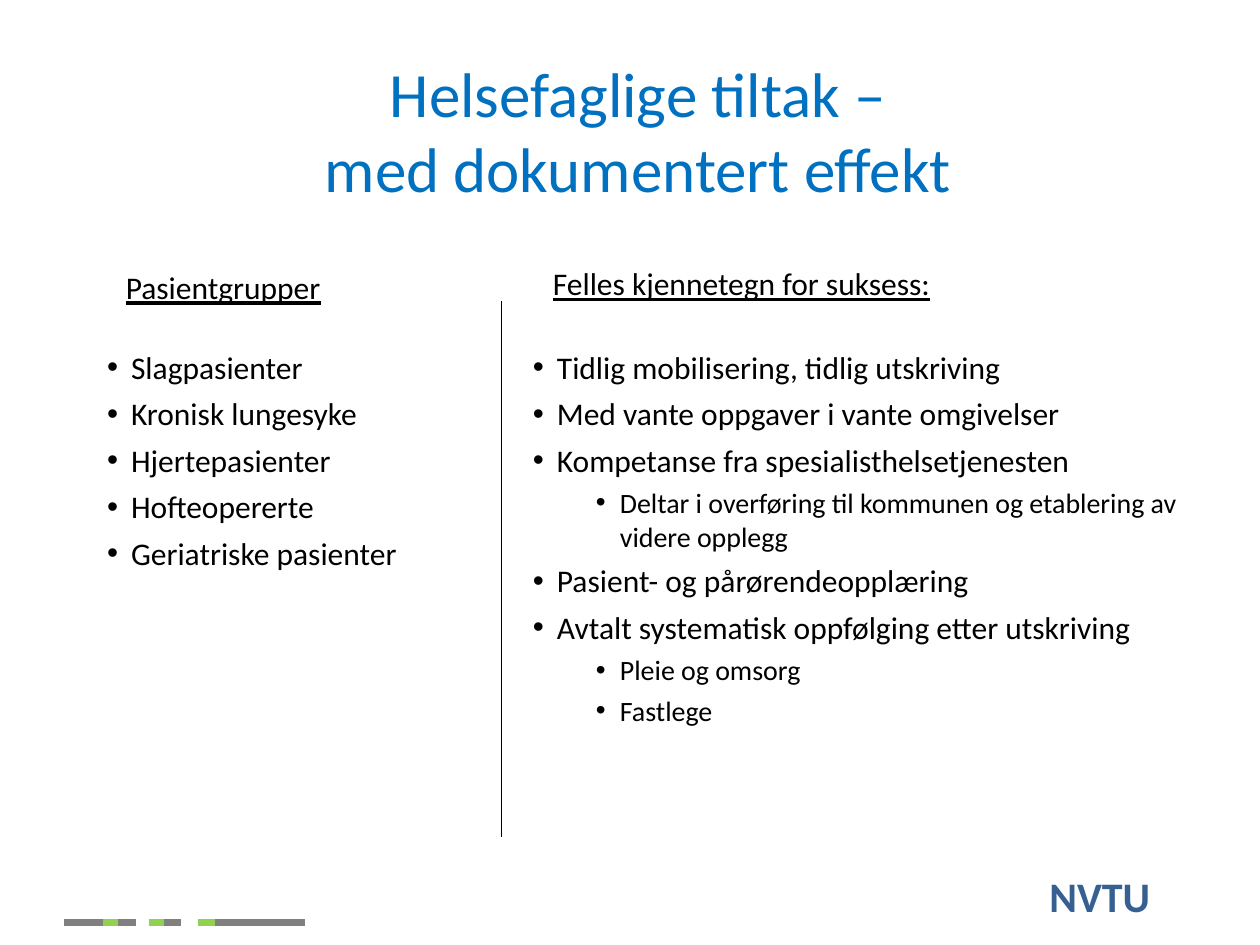
from lxml import etree
from pptx import Presentation
from pptx.dml.color import RGBColor
from pptx.enum.shapes import MSO_CONNECTOR
from pptx.enum.text import MSO_ANCHOR, MSO_AUTO_SIZE, PP_ALIGN
from pptx.oxml.ns import qn
from pptx.util import Inches, Pt

LINE = MSO_CONNECTOR.STRAIGHT
MIDDLE, TOP = MSO_ANCHOR.MIDDLE, MSO_ANCHOR.TOP
LEFT, CENTER = PP_ALIGN.LEFT, PP_ALIGN.CENTER
NONE = MSO_AUTO_SIZE.NONE


def write(shape, box, rows, size=18, color="000000", align=LEFT, anchor=TOP,
          bold=False, under=False, bullet=False, wrap=True):
    shape.left, shape.top, shape.width, shape.height = map(Inches, box)
    frame = shape.text_frame
    frame.word_wrap, frame.auto_size = wrap, NONE
    frame.vertical_anchor = anchor
    for i, (level, text) in enumerate(rows):
        para = frame.add_paragraph() if i else frame.paragraphs[0]
        para.text, para.level, para.alignment = text, level, align
        font = para.font
        font.name, font.size = "Calibri", Pt(size - 2 * level)
        font.bold, font.underline = bold, under
        font.color.rgb = RGBColor.from_string(color)
        for run in para.runs:
            run.font.name, run.font.size = "Calibri", font.size
            run.font.bold, run.font.underline = bold, under
            run.font.color.rgb = RGBColor.from_string(color)
        if bullet:
            para.space_before = Pt(5 - level)
            props = para._p.get_or_add_pPr()
            props.set("marL", str(Inches(0.19 + 0.5 * level)))
            props.set("indent", str(Inches(-0.19)))
            mark = etree.Element(qn("a:buChar"), char="•")
            props.find(qn("a:spcBef")).addnext(mark)


def rule(x1, y1, x2, y2, color, width):
    line = slide.shapes.add_connector(LINE, *map(Inches, (x1, y1, x2, y2)))
    line.line.color.rgb = RGBColor.from_string(color)
    line.line.width = Pt(width)
    etree.SubElement(line._element.spPr, qn("a:effectLst"))


deck = Presentation()
deck.slide_width, deck.slide_height = Inches(10), Inches(7.5)
slide = deck.slides.add_slide(deck.slide_layouts[3])
title, groups, traits = slide.placeholders

write(title, (0.83, 0.36, 8.58, 1.34),
      [(0, "Helsefaglige tiltak – \vmed dokumentert effekt ")],
      size=36, color="0070C0", align=CENTER, anchor=MIDDLE)

write(groups, (0.75, 2.71, 3.23, 1.98), [
    (0, "Slagpasienter"),
    (0, "Kronisk lungesyke"),
    (0, "Hjertepasienter"),
    (0, "Hofteopererte"),
    (0, "Geriatriske pasienter"),
], bullet=True)

write(traits, (4.13, 2.71, 5.87, 3.3), [
    (0, "Tidlig mobilisering, tidlig utskriving"),
    (0, "Med vante oppgaver i vante omgivelser"),
    (0, "Kompetanse fra spesialisthelsetjenesten"),
    (1, "Deltar i overføring til kommunen og etablering av videre opplegg"),
    (0, "Pasient- og pårørendeopplæring"),
    (0, "Avtalt systematisk oppfølging etter utskriving"),
    (1, "Pleie og omsorg"),
    (1, "Fastlege"),
], bullet=True)

for text, box, style in [
    ("Pasientgrupper", (0.9, 2.08, 2.34, 0.4), {"under": True}),
    ("Felles kjennetegn for suksess:", (4.29, 2.05, 5.2, 0.4), {"under": True}),
    ("NVTU", (8.23, 6.86, 1.22, 0.5),
     {"size": 24, "color": "376092", "bold": True, "wrap": False}),
]:
    label = slide.shapes.add_textbox(*map(Inches, box))
    write(label, box, [(0, text)], **style)

rule(3.98, 2.39, 3.98, 6.64, "000000", 0.75)

GREEN, GRAY = "92D050", "808080"
for start, end, color in [
    (0.82, 0.96, GREEN), (0.51, 0.82, GRAY), (1.71, 2.42, GRAY),
    (0.94, 1.08, GRAY), (1.18, 1.32, GREEN), (1.3, 1.44, GRAY),
    (1.57, 1.71, GREEN),
]:
    rule(start, 7.32, end, 7.32, color, 3.75)

deck.save("out.pptx")
